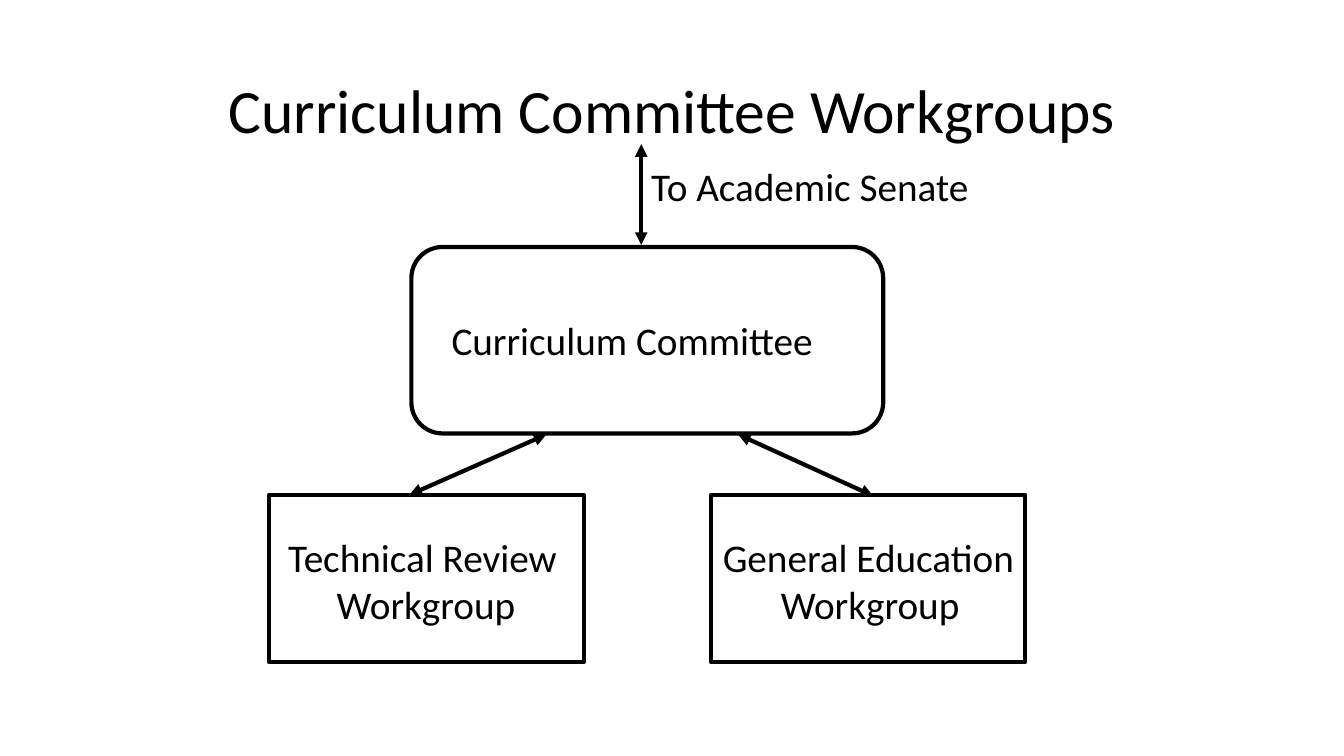
from pptx import Presentation
from pptx import util as u
from pptx.dml.color import RGBColor
from pptx.enum import shapes, text
from pptx.oxml.ns import qn
from lxml import etree

COLORS = {"ink": "000000"}
INK = RGBColor.from_string(COLORS["ink"])
LEFT, MID = text.PP_ALIGN.LEFT, text.PP_ALIGN.CENTER

deck = Presentation()
deck.slide_width, deck.slide_height = u.Inches(13.33), u.Inches(7.5)
slide = deck.slides.add_slide(deck.slide_layouts[6])


def add_text(place, lines, size=28):
    box = slide.shapes.add_textbox(*map(u.Inches, place))
    frame = box.text_frame
    frame.word_wrap = True
    for i, (words, align) in enumerate(lines):
        para = frame.paragraphs[0] if i == 0 else frame.add_paragraph()
        para.text = words
        para.alignment = align
        para.font.name = "Calibri"
        para.font.size = u.Pt(size)
        para.font.color.rgb = INK
    return frame


def add_box(kind, place):
    box = slide.shapes.add_shape(kind, *map(u.Inches, place))
    box.shadow.inherit = False
    box.fill.background()
    box.line.color.rgb = INK
    box.line.width = u.Pt(3)


title = add_text((0.92, 0.4, 11.5, 1.45), [("Curriculum Committee Workgroups", MID)], 44)
title.vertical_anchor = text.MSO_ANCHOR.MIDDLE
title.paragraphs[0].line_spacing = 0.9

add_box(shapes.MSO_SHAPE.ROUNDED_RECTANGLE, (4.08, 2.45, 4.68, 1.85))
add_text((4.38, 3.09, 4.08, 0.57), [("Curriculum Committee", LEFT)])
add_text((6.36, 1.56, 4.08, 0.57), [("To Academic Senate", LEFT)])

groups = [
    (2.67, 2.76, 2.93, "Technical Review"),
    (7.05, 7.07, 3.12, "General Education"),
]
for left, start, width, name in groups:
    add_box(shapes.MSO_SHAPE.RECTANGLE, (left, 4.91, 3.12, 1.66))
    add_text((start, 5.24, width, 1.04), [(name, LEFT), ("Workgroup", MID)])

arrows = [
    (6.36, 1.43, 6.36, 2.43),
    (5.42, 4.31, 4.06, 4.91),
    (7.32, 4.31, 8.66, 4.92),
]
for ends in arrows:
    arrow = slide.shapes.add_connector(shapes.MSO_CONNECTOR.STRAIGHT, *map(u.Inches, ends))
    arrow.line.color.rgb = INK
    arrow.line.width = u.Pt(3)
    line = arrow.line._get_or_add_ln()
    for tip in ("a:headEnd", "a:tailEnd"):
        etree.SubElement(line, qn(tip), type="triangle")
    etree.SubElement(line.getparent(), qn("a:effectLst"))

deck.save("out.pptx")
